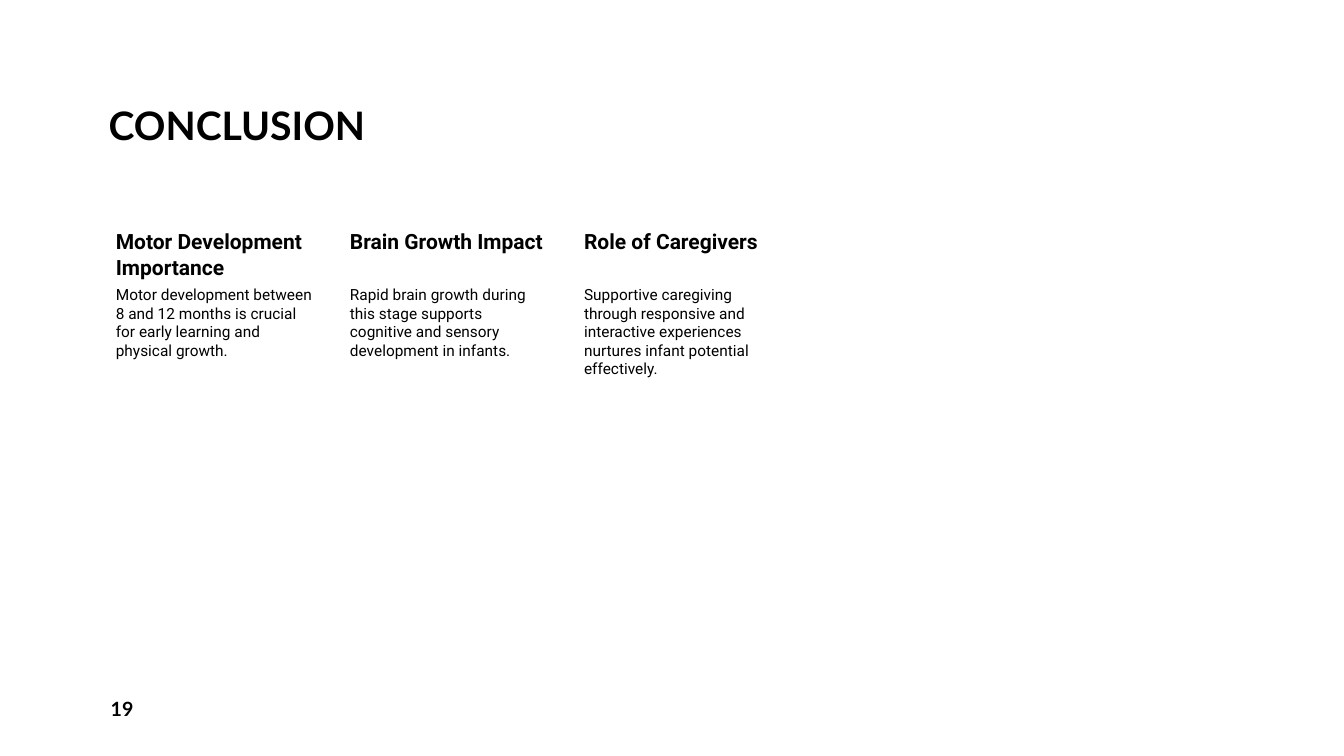
from pptx import Presentation
from pptx.dml.color import RGBColor
from pptx.enum.text import MSO_ANCHOR
from pptx.util import Cm, Pt

# Content
TITLE = "CONCLUSION"
PAGE_NUMBER = "19"
COLUMNS = [
    ("Motor Development Importance",
     "Motor development between 8 and 12 months is crucial for early learning "
     "and physical growth."),
    ("Brain Growth Impact",
     "Rapid brain growth during this stage supports cognitive and sensory "
     "development in infants."),
    ("Role of Caregivers",
     "Supportive caregiving through responsive and interactive experiences "
     "nurtures infant potential effectively."),
]

# Style
BLACK = RGBColor(0, 0, 0)
WHITE = RGBColor(255, 255, 255)
HEADING_FONT, BODY_FONT = "Lato", "Roboto"
DEFAULT_INSETS = (0.25, 0.13, 0.25, 0.13)
COLUMN_INSETS = (0.38, 0.05, 0.05, 0.05)

# Column layout in cm
LEFT, TOP = 2.54, 5.72
COLUMN_W, COLUMN_STEP = 5.38, 5.9
HEADING_H, BODY_H = 1.42, 8.1


def add_text(s, text, box, size, font, bold=False,
             insets=DEFAULT_INSETS, anchor=MSO_ANCHOR.TOP):
    sp = s.shapes.add_textbox(*(Cm(v) for v in box))
    tf = sp.text_frame
    tf.word_wrap = True
    tf.vertical_anchor = anchor
    tf.margin_left, tf.margin_top, tf.margin_right, tf.margin_bottom = (
        Cm(v) for v in insets)
    tf.text = text
    p = tf.paragraphs[0]
    r = p.runs[0]
    r.font.size = Pt(size)
    r.font.name = font
    r.font.bold = bold
    r.font.color.rgb = BLACK
    return p


def main():
    prs = Presentation()
    prs.slide_width, prs.slide_height = Cm(33.87), Cm(19.05)
    s = prs.slides.add_slide(prs.slide_layouts[6])
    s.background.fill.solid()
    s.background.fill.fore_color.rgb = WHITE

    # Title
    p = add_text(s, TITLE, (2.49, 0.2, 28.9, 3.68), 28, HEADING_FONT,
                 bold=True, anchor=MSO_ANCHOR.BOTTOM)
    p.line_spacing = 0.9

    # Three columns: heading above body
    for i, (heading, body) in enumerate(COLUMNS):
        x = LEFT + i * COLUMN_STEP
        add_text(s, heading, (x, TOP, COLUMN_W, HEADING_H), 15, BODY_FONT,
                 bold=True, insets=COLUMN_INSETS)
        add_text(s, body, (x, TOP + HEADING_H, COLUMN_W, BODY_H), 11,
                 BODY_FONT, insets=COLUMN_INSETS)

    # Page number
    p = add_text(s, PAGE_NUMBER, (LEFT, 17.35, 7.42, 1.02), 14, HEADING_FONT,
                 bold=True, anchor=MSO_ANCHOR.MIDDLE)
    p.space_after = Pt(6)

    prs.save("out.pptx")


if __name__ == "__main__":
    main()
